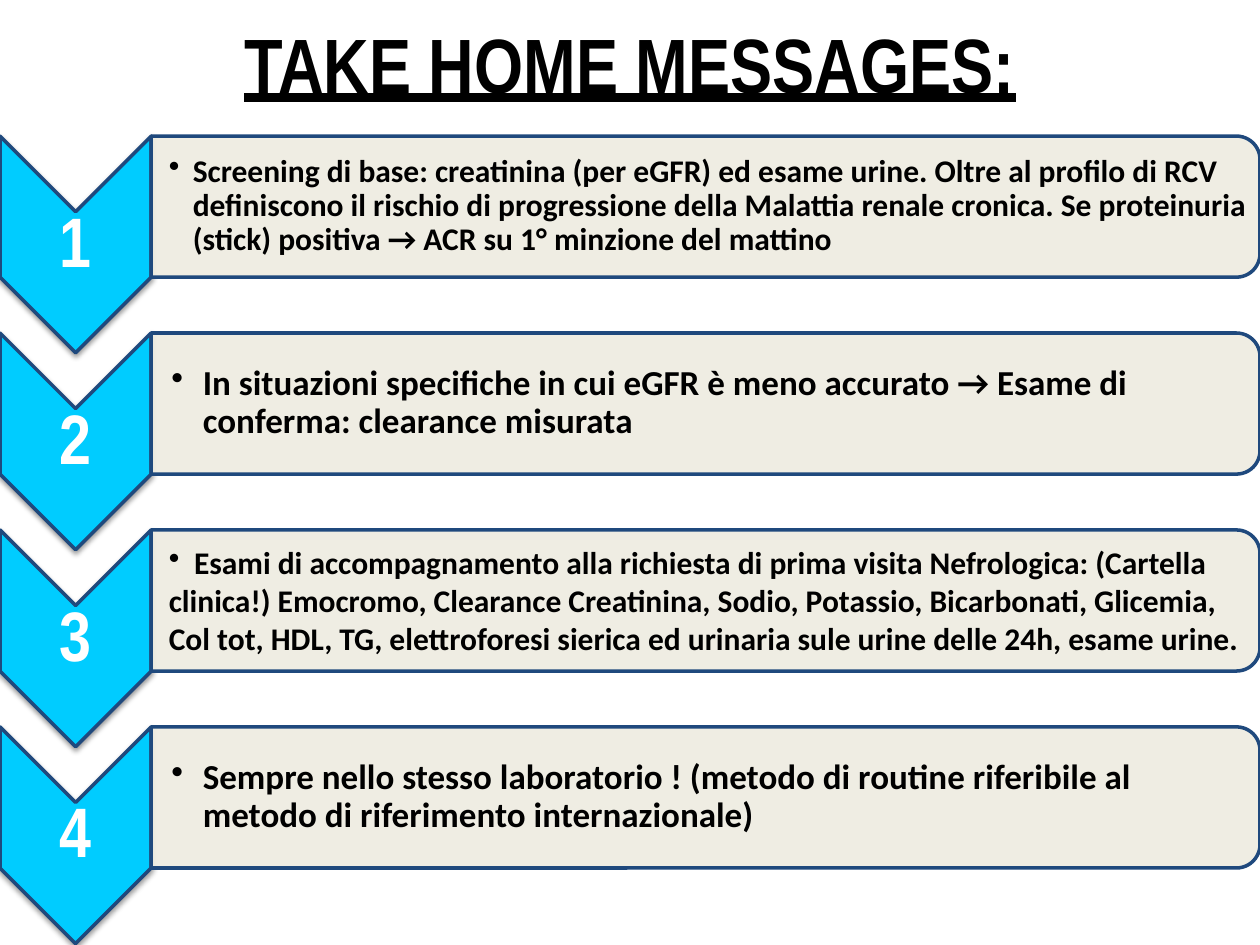
import pptx
import pptx.util
import pptx.dml.color
import pptx.enum.shapes
import pptx.enum.text
import pptx.oxml.ns
from lxml import etree

Inches, Pt = pptx.util.Inches, pptx.util.Pt
SHAPE = pptx.enum.shapes.MSO_SHAPE
CENTER = pptx.enum.text.PP_ALIGN.CENTER

COLORS = {"text": "000000", "number": "FFFFFF", "chevron": "00CCFF",
          "bar": "EEECE1", "outline": "1F497D", "shadow": "000000"}

TOP, PITCH = 1.08, 1.563  # top of the first bar, step from row to row
NUMBER_W, BAR_W, BAR_H, CHEVRON_H = 1.2, 8.8, 1.12, 1.72

# Message, size, left inset, hanging indent, line spacing
MESSAGES = [
    ("Screening di base: creatinina (per eGFR) ed esame urine. Oltre al profilo di RCV "
     "definiscono il rischio di progressione della Malattia renale cronica. Se proteinuria "
     "(stick) positiva → ACR su 1° minzione del mattino", 18, 0.14, 0.19, 0.9),
    ("In situazioni specifiche in cui eGFR è meno accurato → Esame di conferma: "
     "clearance misurata", 20, 0.16, 0.25, 0.9),
    ("\tEsami di accompagnamento alla richiesta di prima visita Nefrologica: (Cartella "
     "clinica!) Emocromo, Clearance Creatinina, Sodio, Potassio, Bicarbonati, Glicemia, "
     "Col tot, HDL, TG, elettroforesi sierica ed urinaria sule urine delle 24h, "
     "esame urine.", 18, 0.14, 0, 1.0),
    ("Sempre nello stesso laboratorio ! (metodo di routine riferibile al metodo di "
     "riferimento internazionale)", 20, 0.16, 0.25, 0.9),
]


def rgb(name):
    return pptx.dml.color.RGBColor.from_string(COLORS[name])


def sub(parent, tag, **attrs):
    el = etree.SubElement(parent, pptx.oxml.ns.qn(tag))
    for key, value in attrs.items():
        el.set(key, str(value))
    return el


def add_turned(s, kind, x, y, w, h, fill):
    """Add a shape turned by 90 degrees that shows in the box x, y, w, h."""
    sp = s.shapes.add_shape(kind, Inches(x + (w - h) / 2), Inches(y + (h - w) / 2),
                            Inches(h), Inches(w))
    sp.rotation = 90
    sp.fill.solid()
    sp.fill.fore_color.rgb = rgb(fill)
    sp.line.color.rgb = rgb("outline")
    sp.line.width = Pt(2)
    sp.shadow.inherit = False
    return sp


def add_text(s, x, y, w, h, text, size, font, color, margins, spacing=1.0):
    tf = s.shapes.add_textbox(Inches(x), Inches(y), Inches(w), Inches(h)).text_frame
    tf.word_wrap = True
    tf.vertical_anchor = pptx.enum.text.MSO_ANCHOR.MIDDLE
    tf.margin_left, tf.margin_top, tf.margin_right, tf.margin_bottom = map(Inches, margins)
    tf.text = text
    p = tf.paragraphs[0]
    p.line_spacing = spacing
    f = p.runs[0].font
    f.size, f.name, f.bold = Pt(size), font, True
    f.color.rgb = rgb(color)
    return p


def add_chevron(s, y, number):
    sp = add_turned(s, SHAPE.CHEVRON, 0, y, NUMBER_W, CHEVRON_H, "chevron")
    effects = sp._element.spPr.find(pptx.oxml.ns.qn("a:effectLst"))
    shadow = sub(effects, "a:outerShdw", blurRad=Pt(3.1), dist=Pt(1.6),
                 dir=5400000, rotWithShape=0)
    clr = sub(shadow, "a:srgbClr", val=COLORS["shadow"])
    sub(clr, "a:alpha", val=38000)
    p = add_text(s, 0, y + 0.6, NUMBER_W, 0.52, str(number), 40, "Arial Narrow",
                 "number", [0.03] * 4, 0.9)
    p.alignment = CENTER


def add_message(s, y, text, size, inset, indent, spacing):
    sp = add_turned(s, SHAPE.ROUND_2_SAME_RECTANGLE, NUMBER_W, y, BAR_W, BAR_H, "bar")
    clr = sp._element.spPr.find(".//" + pptx.oxml.ns.qn("a:srgbClr"))
    sub(clr, "a:alpha", val=90000)
    p = add_text(s, NUMBER_W, y + 0.05, 8.74, 1.01, text, size, "Calibri", "text",
                 [inset, 0.01, 0.01, 0.01], spacing)
    # Bullet, with a tab stop for the message that has no hanging indent
    p.level = 1
    pPr = p._p.get_or_add_pPr()
    pPr.set("marL", str(Inches(indent)))
    pPr.set("indent", str(-Inches(indent)))
    sub(pPr, "a:buChar", char="•")
    if not indent:
        sub(sub(pPr, "a:tabLst"), "a:tab", pos=Inches(0.2), algn="l")


def main():
    prs = pptx.Presentation()
    prs.slide_width, prs.slide_height = Inches(10), Inches(7.5)
    s = prs.slides.add_slide(prs.slide_layouts[6])

    # Title
    p = add_text(s, 0.5, 0, 9, 0.99, "TAKE HOME MESSAGES:", 44, "Arial Narrow",
                 "text", [0.1, 0.05, 0.1, 0.05])
    p.alignment = CENTER
    p.runs[0].font.underline = True

    # Numbered messages
    for i, message in enumerate(MESSAGES):
        y = TOP + i * PITCH
        add_chevron(s, y, i + 1)
        add_message(s, y, *message)

    prs.save("out.pptx")


if __name__ == "__main__":
    main()
